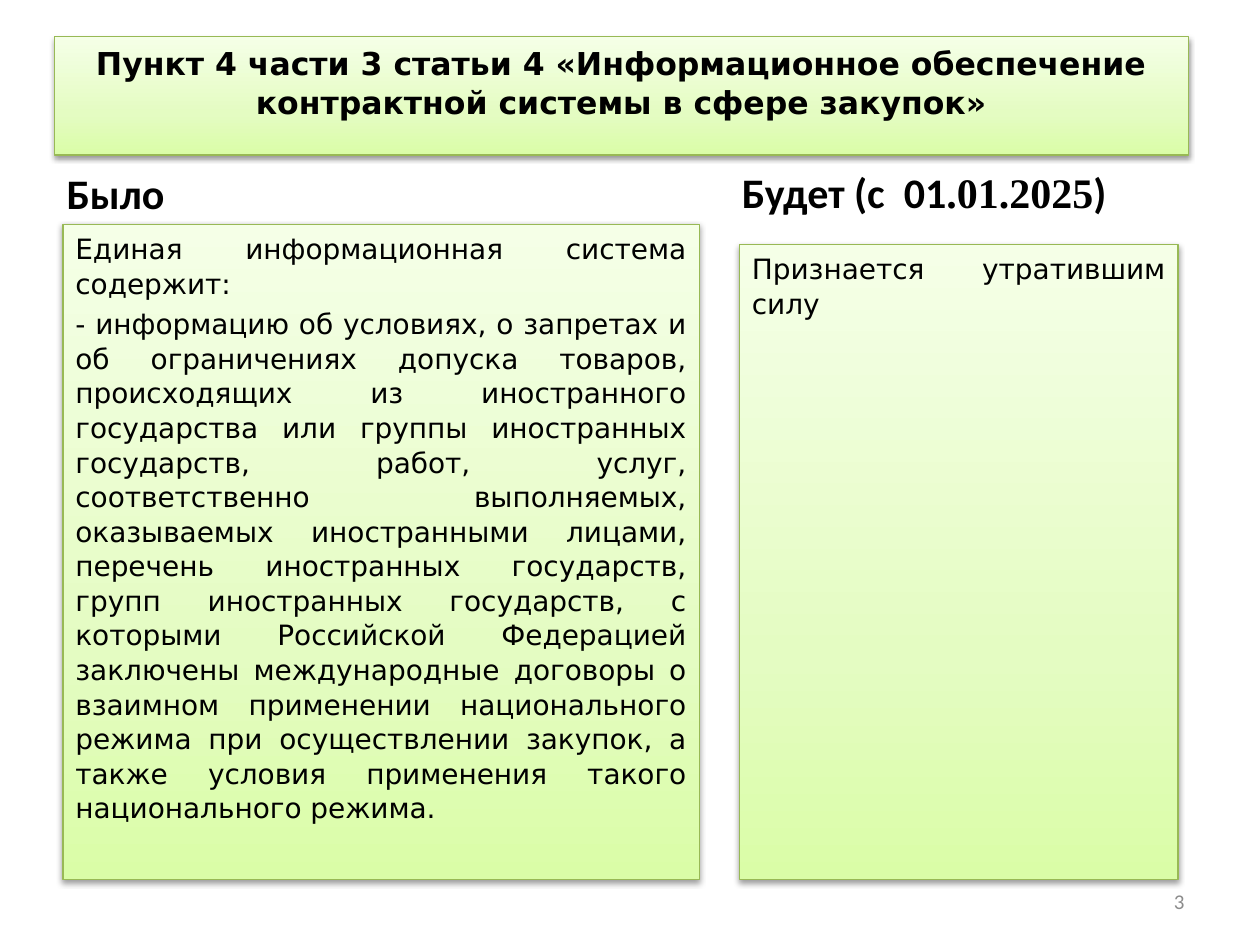
import copy

import pptx
import pptx.dml.color
import pptx.enum.shapes
import pptx.enum.text
import pptx.oxml
import pptx.oxml.ns
import pptx.util

Pt = pptx.util.Pt
Align = pptx.enum.text.PP_ALIGN
Anchor = pptx.enum.text.MSO_ANCHOR

COLORS = {
    "text": "000000",
    "number": "8C8C8C",
    "border": "98B955",
    "deep": "DAFDA7",
    "middle": "E4FCC2",
    "light": "F5FFE7",
}
GRADIENT = ((0, "deep"), (0.35, "middle"), (1, "light"))
SHADOW = (
    f'<a:effectLst {pptx.oxml.ns.nsdecls("a")}>'
    f'<a:outerShdw blurRad="{Pt(3.1)}" dist="{Pt(1.6)}" dir="5400000" rotWithShape="0">'
    '<a:srgbClr val="000000"><a:alpha val="38000"/></a:srgbClr>'
    '</a:outerShdw></a:effectLst>'
)


def rgb(name):
    return pptx.dml.color.RGBColor.from_string(COLORS[name])


def write_text(paragraph, text, font="DejaVu Sans", size=16, bold=False, color="text"):
    run = paragraph.add_run()
    run.text = text
    run.font.name = font
    run.font.size = Pt(size)
    run.font.bold = bold
    run.font.color.rgb = rgb(color)


class SlideBuilder:
    heading_format = {"font": "Calibri", "size": 24, "bold": True}
    line_spacing = 1.03

    def __init__(self, presentation):
        self.slide = presentation.slides.add_slide(presentation.slide_layouts[5])

    def place(self, shape, left, top, width, height):
        shape.left, shape.top = Pt(left), Pt(top)
        shape.width, shape.height = Pt(width), Pt(height)

    def prepare_frame(self, shape, anchor):
        frame = shape.text_frame
        frame.word_wrap = True
        frame.auto_size = pptx.enum.text.MSO_AUTO_SIZE.NONE
        frame.vertical_anchor = anchor
        return frame

    def style_panel(self, shape):
        """Green gradient, thin border and soft shadow."""
        shape.fill.gradient()
        shape.fill.gradient_angle = 90
        stops = shape.fill.gradient_stops
        first = stops[0]._stop if hasattr(stops[0], "_stop") else None
        stop_list = shape._element.spPr.find(".//" + pptx.oxml.ns.qn("a:gsLst"))
        stop_list.insert(1, copy.deepcopy(stop_list[0]))
        for stop, (position, color) in zip(shape.fill.gradient_stops, GRADIENT):
            stop.position = position
            stop.color.rgb = rgb(color)
        shape.line.color.rgb = rgb("border")
        shape.line.width = Pt(0.75)
        shape._element.spPr.append(pptx.oxml.parse_xml(SHADOW))

    def title(self, text, *box):
        shape = self.slide.shapes.title
        self.place(shape, *box)
        self.style_panel(shape)
        paragraph = self.prepare_frame(shape, Anchor.TOP).paragraphs[0]
        paragraph.alignment = Align.CENTER
        paragraph.line_spacing = self.line_spacing
        write_text(paragraph, text, size=18, bold=True)

    def panel(self, texts, *box):
        shape = self.slide.shapes.add_shape(
            pptx.enum.shapes.MSO_SHAPE.RECTANGLE, *map(Pt, box))
        self.style_panel(shape)
        frame = self.prepare_frame(shape, Anchor.TOP)
        for index, text in enumerate(texts):
            paragraph = frame.add_paragraph() if index else frame.paragraphs[0]
            paragraph.alignment = Align.JUSTIFY
            paragraph.line_spacing = self.line_spacing
            paragraph.space_before = Pt(3.5)
            write_text(paragraph, text)

    def label(self, runs, *box, anchor=Anchor.BOTTOM, align=Align.LEFT):
        shape = self.slide.shapes.add_textbox(*map(Pt, box))
        paragraph = self.prepare_frame(shape, anchor).paragraphs[0]
        paragraph.alignment = align
        for text, changes in runs:
            write_text(paragraph, text, **{**self.heading_format, **changes})


def main():
    presentation = pptx.Presentation()
    presentation.slide_width, presentation.slide_height = Pt(720), Pt(540)
    builder = SlideBuilder(presentation)

    # Title
    builder.title(
        "Пункт 4 части 3 статьи 4 «Информационное обеспечение "
        "контрактной системы в сфере закупок»",
        31, 20.8, 648, 67.8)

    # Left column: current wording
    builder.label([("Было", {})], 31, 77, 334.8, 51.2)
    builder.panel(
        ["Единая информационная система содержит:",
         "- информацию об условиях, о запретах и об ограничениях допуска товаров, "
         "происходящих из иностранного государства или группы иностранных государств, "
         "работ, услуг, соответственно выполняемых, оказываемых иностранными лицами, "
         "перечень иностранных государств, групп иностранных государств, с которыми "
         "Российской Федерацией заключены международные договоры о взаимном применении "
         "национального режима при осуществлении закупок, а также условия применения "
         "такого национального режима."],
        36, 128.2, 363.6, 374.4)

    # Right column: future wording
    builder.label(
        [("Будет (с  01", {}), (".01.2025", {"font": "Times New Roman"}), (")", {})],
        416.9, 77, 260.6, 50.4)
    builder.panel(["Признается утратившим силу"], 422.6, 139.7, 250.6, 362.9)

    # Slide number
    builder.label([("3", {"size": 12, "bold": False, "color": "number"})],
                  516.2, 500.4, 167.8, 28.8, anchor=Anchor.MIDDLE, align=Align.RIGHT)

    presentation.save("out.pptx")


if __name__ == "__main__":
    main()
